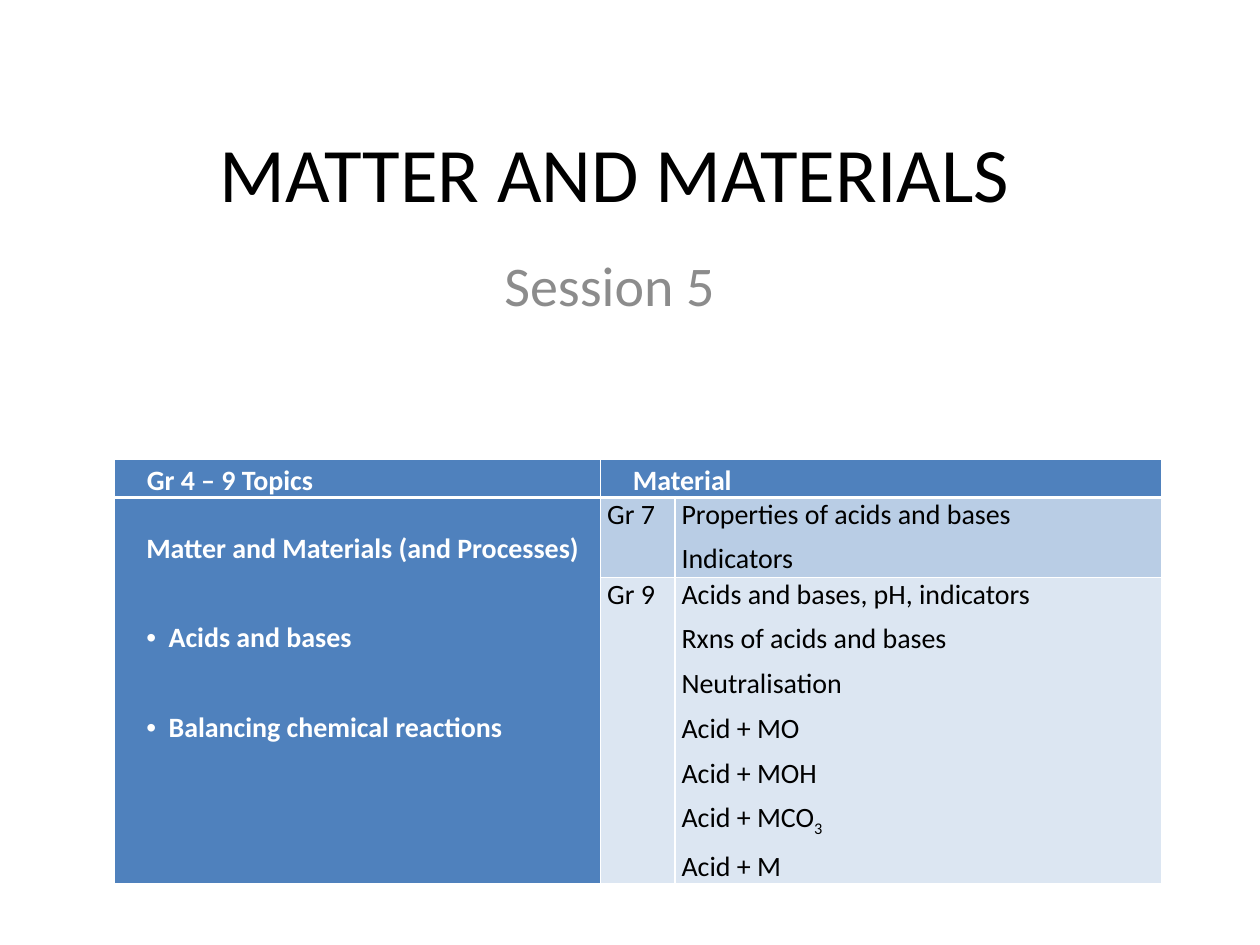
from dataclasses import dataclass

from lxml import etree
from pptx import Presentation
from pptx.dml.color import RGBColor
from pptx.enum.text import MSO_ANCHOR, PP_ALIGN
from pptx.oxml.ns import qn
from pptx.util import Cm, Pt

CENTER = PP_ALIGN.CENTER
MIDDLE = MSO_ANCHOR.MIDDLE
TOP = MSO_ANCHOR.TOP
TITLE_ONLY = 5


@dataclass(frozen=True)
class Theme:
    """Colours, font and type sizes of the slide."""
    font: str = "Calibri"
    black: str = "000000"
    white: str = "FFFFFF"
    grey: str = "8C8C8C"
    blue: str = "4F81BD"
    mid_blue: str = "B9CDE5"
    pale_blue: str = "DCE6F2"
    title: int = 44
    subtitle: int = 32
    body: int = 16
    thin: float = 1
    thick: float = 2.25


THEME = Theme()
COLUMN_WIDTHS = (9.8, 1.5, 9.8)
ROW_HEIGHTS = (0.76, 1.61, 6.17)
TOPIC_HEADING = "Matter and Materials (and Processes)"
TOPICS = ("Acids and bases", "Balancing chemical reactions")
GRADES = (
    ("Gr 7", ("Properties of acids and bases", "Indicators"), THEME.mid_blue),
    ("Gr 9", ("Acids and bases, pH, indicators", "Rxns of acids and bases",
              "Neutralisation", "Acid + MO", "Acid + MOH", "Acid + MCO",
              "Acid + M"), THEME.pale_blue),
)


def format_runs(paragraph, size, color, bold=False):
    """Give every run of a paragraph its font."""
    for run in paragraph.runs:
        run.font.name = THEME.font
        run.font.size = Pt(size)
        run.font.bold = bold
        run.font.color.rgb = RGBColor.from_string(color)


def fill_heading(shape, text, box, size, color, anchor):
    """Place a centred one-line heading in a shape."""
    shape.left, shape.top, shape.width, shape.height = map(Cm, box)
    frame = shape.text_frame
    frame.word_wrap = True
    frame.vertical_anchor = anchor
    frame.text = text
    paragraph = frame.paragraphs[0]
    paragraph.alignment = CENTER
    format_runs(paragraph, size, color)
    return paragraph


def set_borders(cell, width, sides):
    """Draw white lines on the given sides of a cell."""
    properties = cell._tc.get_or_add_tcPr()
    for side in sides:
        line = etree.SubElement(properties, qn(f"a:ln{side}"), w=str(Pt(width)))
        fill = etree.SubElement(line, qn("a:solidFill"))
        etree.SubElement(fill, qn("a:srgbClr"), val=THEME.white)


def fill_cell(cell, lines, fill, color, spacing, bold=False, line_spacing=1.0,
              bottom=THEME.thin):
    """Write lines into a cell and set its fill, borders and margins."""
    set_borders(cell, THEME.thin, "LRT")
    set_borders(cell, bottom, "B")
    cell.fill.solid()
    cell.fill.fore_color.rgb = RGBColor.from_string(fill)
    cell.margin_left = cell.margin_right = Cm(0.13)
    cell.margin_top = cell.margin_bottom = 0
    cell.text_frame.text = "\n".join(lines)
    for paragraph in cell.text_frame.paragraphs:
        paragraph.space_before = paragraph.space_after = Pt(spacing)
        paragraph.line_spacing = line_spacing
        format_runs(paragraph, THEME.body, color, bold)


def indent(paragraph, left, hanging=0.0, bullet=False):
    """Indent a paragraph and give it a bullet if wanted."""
    properties = paragraph._p.get_or_add_pPr()
    properties.set("marL", str(Cm(left)))
    properties.set("indent", str(-Cm(hanging)))
    if bullet:
        etree.SubElement(properties, qn("a:buFont"), typeface="Arial")
        etree.SubElement(properties, qn("a:buChar"), char="•")


def add_subscript(paragraph, text):
    """Append a subscript run to a paragraph."""
    run = paragraph.add_run()
    run.text = text
    run._r.get_or_add_rPr().set("baseline", "-25000")
    format_runs(paragraph, THEME.body, THEME.black)


def add_topic_table(slide):
    """Add the table of topics and the material for each grade."""
    table = slide.shapes.add_table(
        len(ROW_HEIGHTS), len(COLUMN_WIDTHS), Cm(2.31), Cm(9.25),
        Cm(sum(COLUMN_WIDTHS)), Cm(sum(ROW_HEIGHTS))).table
    for column, width in zip(table.columns, COLUMN_WIDTHS):
        column.width = Cm(width)
    for row, height in zip(table.rows, ROW_HEIGHTS):
        row.height = Cm(height)
    table.cell(0, 1).merge(table.cell(0, 2))
    table.cell(1, 0).merge(table.cell(2, 0))

    for column, text in enumerate(("Gr 4 – 9 Topics", "Material")):
        header = table.cell(0, column)
        fill_cell(header, [text], THEME.blue, THEME.white, 6, True, 1.15,
                  THEME.thick)
        header.margin_left = header.margin_right = Cm(0.15)
        indent(header.text_frame.paragraphs[0], 0.5)

    topics = table.cell(1, 0)
    fill_cell(topics, (TOPIC_HEADING, *TOPICS), THEME.blue, THEME.white, 6,
              True, 2.0)
    for number, paragraph in enumerate(topics.text_frame.paragraphs):
        indent(paragraph, 0.96, 0.45, bullet=number > 0)

    for row, (grade, lines, fill) in enumerate(GRADES, start=1):
        fill_cell(table.cell(row, 1), [grade], fill, THEME.black, 3)
        fill_cell(table.cell(row, 2), lines, fill, THEME.black, 3)
    add_subscript(table.cell(2, 2).text_frame.paragraphs[5], "3")


def main():
    """Build the slide and save it."""
    presentation = Presentation()
    presentation.slide_width, presentation.slide_height = Cm(25.4), Cm(19.05)
    slide = presentation.slides.add_slide(presentation.slide_layouts[TITLE_ONLY])
    fill_heading(slide.shapes.title, "MATTER AND MATERIALS",
                 (1.6, 1.42, 21.59, 4.09), THEME.title, THEME.black, MIDDLE)
    subtitle_box = (3.4, 4.93, 17.78, 4.88)
    subtitle = fill_heading(
        slide.shapes.add_textbox(*map(Cm, subtitle_box)), "Session 5",
        subtitle_box, THEME.subtitle, THEME.grey, TOP)
    subtitle.space_before = Pt(0.2 * THEME.subtitle)
    add_topic_table(slide)
    presentation.save("out.pptx")


if __name__ == "__main__":
    main()
